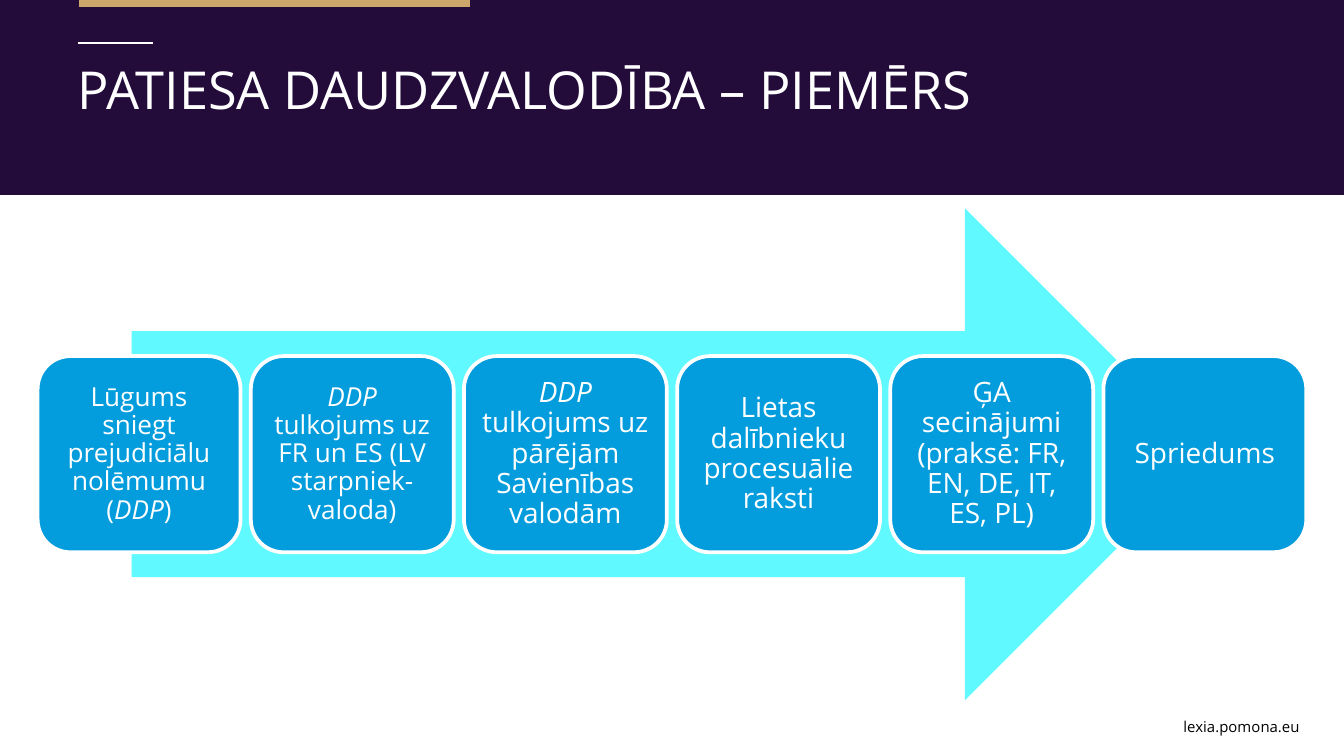
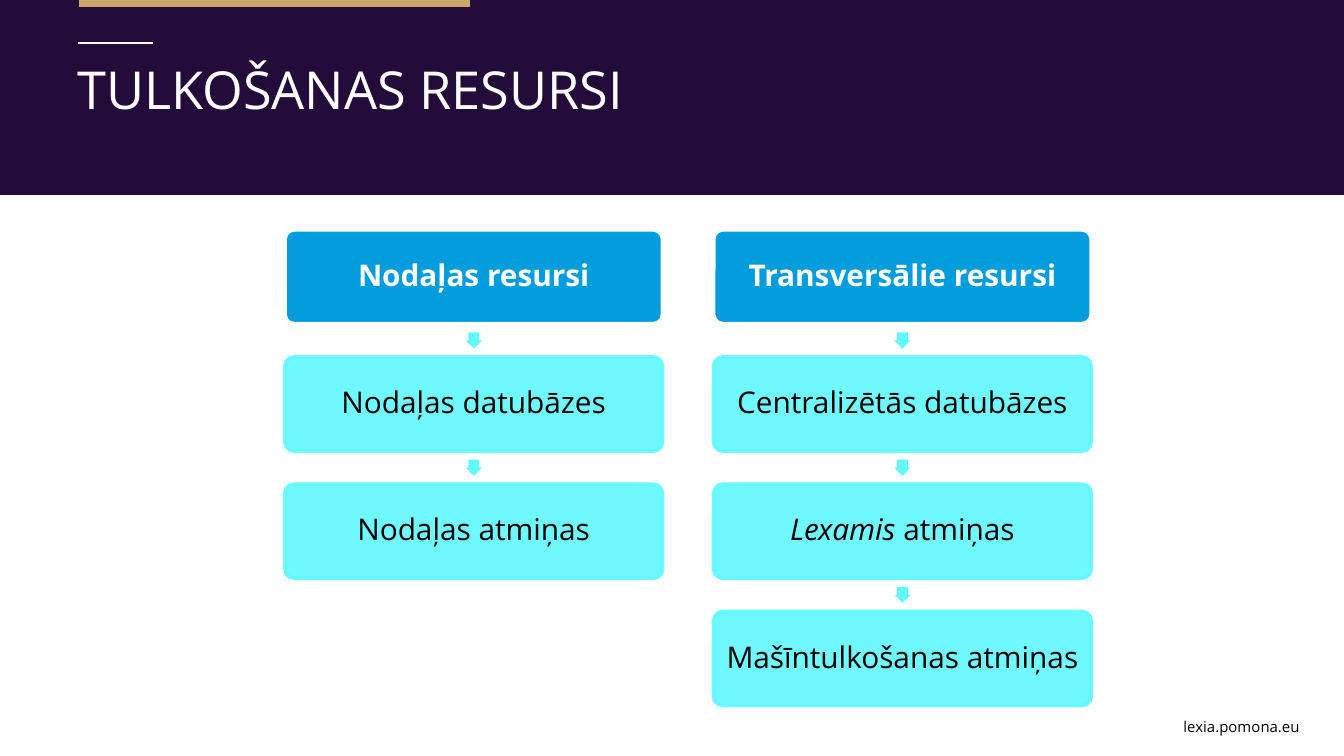
from lxml import etree
from pptx import Presentation
from pptx.dml.color import RGBColor
from pptx.enum.shapes import MSO_CONNECTOR as Connector, MSO_SHAPE as Preset
from pptx.enum.text import MSO_ANCHOR as Anchor, PP_ALIGN as Align
from pptx.oxml.ns import qn
from pptx.util import Inches, Pt

# Content: each text is a list of (words, style) spans
STEPS_TITLE = "PATIESA DAUDZVALODĪBA – PIEMĒRS"
STEPS = [
    (14, [("Lūgums sniegt prejudiciālu nolēmumu (", ""), ("DDP", "italic"), (")", "")]),
    (14, [("DDP", "italic"), (" tulkojums uz FR un ES (LV starpniek-valoda)", "")]),
    (15, [("DDP", "italic"), (" tulkojums uz pārējām Savienības valodām", "")]),
    (15, [("Lietas dalībnieku procesuālie raksti", "")]),
    (15, [("ĢA secinājumi (praksē: FR, EN, DE, IT, ES, PL)", "")]),
    (15, [("Spriedums", "")]),
]
RESOURCES_TITLE = "TULKOŠANAS RESURSI"
RESOURCES = [
    [
        [("Nodaļas resursi", "bold")],
        [("Nodaļas datubāzes", "")],
        [("Nodaļas atmiņas", "")],
    ],
    [
        [("Transversālie resursi", "bold")],
        [("Centralizētās datubāzes", "")],
        [("Lexamis", "italic"), (" atmiņas", "")],
        [("Mašīntulkošanas atmiņas", "")],
    ],
]
FOOTER = "lexia.pomona.eu"

# Shared style
FONT = "Open Sans"
COLORS = {
    "band": "230B3A", "gold": "CDA769", "white": "FFFFFF",
    "black": "000000", "blue": "039CDC", "cyan": "60F9FF",
}


def color(name):
    return RGBColor.from_string(COLORS[name])


def add_box(page, preset, left, top, width, height, fill, line=None):
    box = page.shapes.add_shape(
        preset, Inches(left), Inches(top), Inches(width), Inches(height))
    box.shadow.inherit = False
    box.fill.solid()
    box.fill.fore_color.rgb = color(fill)
    if line:
        box.line.color.rgb = color(line)
        box.line.width = Pt(2)
    else:
        box.line.fill.background()
    return box


def add_rule(page, left, right, top, name, weight):
    rule = page.shapes.add_connector(
        Connector.STRAIGHT, Inches(left), Inches(top), Inches(right), Inches(top))
    rule.line.color.rgb = color(name)
    rule.line.width = Pt(weight)
    etree.SubElement(rule._element.spPr, qn("a:effectLst"))


def write(box, spans, size, name, align, margin=None):
    frame = box.text_frame
    frame.word_wrap = True
    if margin is not None:
        frame.vertical_anchor = Anchor.MIDDLE
        frame.margin_left = frame.margin_right = Inches(margin)
        frame.margin_top = frame.margin_bottom = Inches(margin)
    para = frame.paragraphs[0]
    para.alignment = align
    for words, style in spans:
        span = para.add_run()
        span.text = words
        span.font.name = FONT
        span.font.size = Pt(size)
        span.font.color.rgb = color(name)
        span.font.bold = style == "bold"
        span.font.italic = style == "italic"
    return para


def add_text(page, left, top, width, height, words, size, name, align):
    box = page.shapes.add_textbox(
        Inches(left), Inches(top), Inches(width), Inches(height))
    write(box, [(words, "")], size, name, align)


def make_translucent(box, percent):
    for tint in box._element.spPr.iter(qn("a:srgbClr")):
        etree.SubElement(tint, qn("a:alpha"), val=str(percent * 1000))


def add_page(deck, title):
    page = deck.slides.add_slide(deck.slide_layouts[6])
    add_box(page, Preset.RECTANGLE, 0, 0, 10, 1.45, "band")
    add_rule(page, 0.59, 3.5, 0.02, "gold", 4.5)
    add_rule(page, 0.58, 1.14, 0.32, "white", 1)
    add_text(page, 7.64, 5.29, 2.13, 0.23, FOOTER, 8, "black", Align.RIGHT)
    add_text(page, 0.48, 0.38, 8.06, 0.84, title, 28, "white", Align.LEFT)
    return page


def add_steps(page):
    # Big arrow behind evenly spaced cards
    add_box(page, Preset.RIGHT_ARROW, 0.98, 1.55, 8.03, 3.66, "cyan")
    first, last, width = 0.28, 8.21, 1.51
    pitch = (last - first) / (len(STEPS) - 1)
    for index, (size, spans) in enumerate(STEPS):
        card = add_box(page, Preset.ROUNDED_RECTANGLE, first + index * pitch, 2.65,
                       width, 1.46, "blue", "white")
        write(card, spans, size, "white", Align.CENTER, 0.06).line_spacing = 0.9


def add_resources(page):
    # Columns of cards, with a small arrow in each gap
    top, width, height, arrow_size = 1.71, 2.81, 0.7, 0.12
    pitch = (4.55 - top) / 3
    for left, column in zip((2.12, 5.31), RESOURCES):
        for row, spans in enumerate(column):
            fill, line, ink = ("cyan", "cyan", "black") if row else ("blue", "white", "white")
            card_top = top + row * pitch
            if row:
                gap_middle = card_top - (pitch - height) / 2
                arrow = add_box(page, Preset.RIGHT_ARROW,
                                left + (width - arrow_size) / 2,
                                gap_middle - arrow_size / 2,
                                arrow_size, arrow_size, "cyan")
                arrow.rotation = 90
                arrow.adjustments[0] = 0.67
            card = add_box(page, Preset.ROUNDED_RECTANGLE, left, card_top,
                           width, height, fill, line)
            card.adjustments[0] = 0.1
            if row:
                make_translucent(card, 90)
            write(card, spans, 16, ink, Align.CENTER, 0.02).line_spacing = 0.9


def main():
    # Widescreen, 16:9
    deck = Presentation()
    deck.slide_width = Inches(10)
    deck.slide_height = Inches(10 * 9 / 16)
    add_steps(add_page(deck, STEPS_TITLE))
    add_resources(add_page(deck, RESOURCES_TITLE))
    deck.save("out.pptx")


if __name__ == "__main__":
    main()
